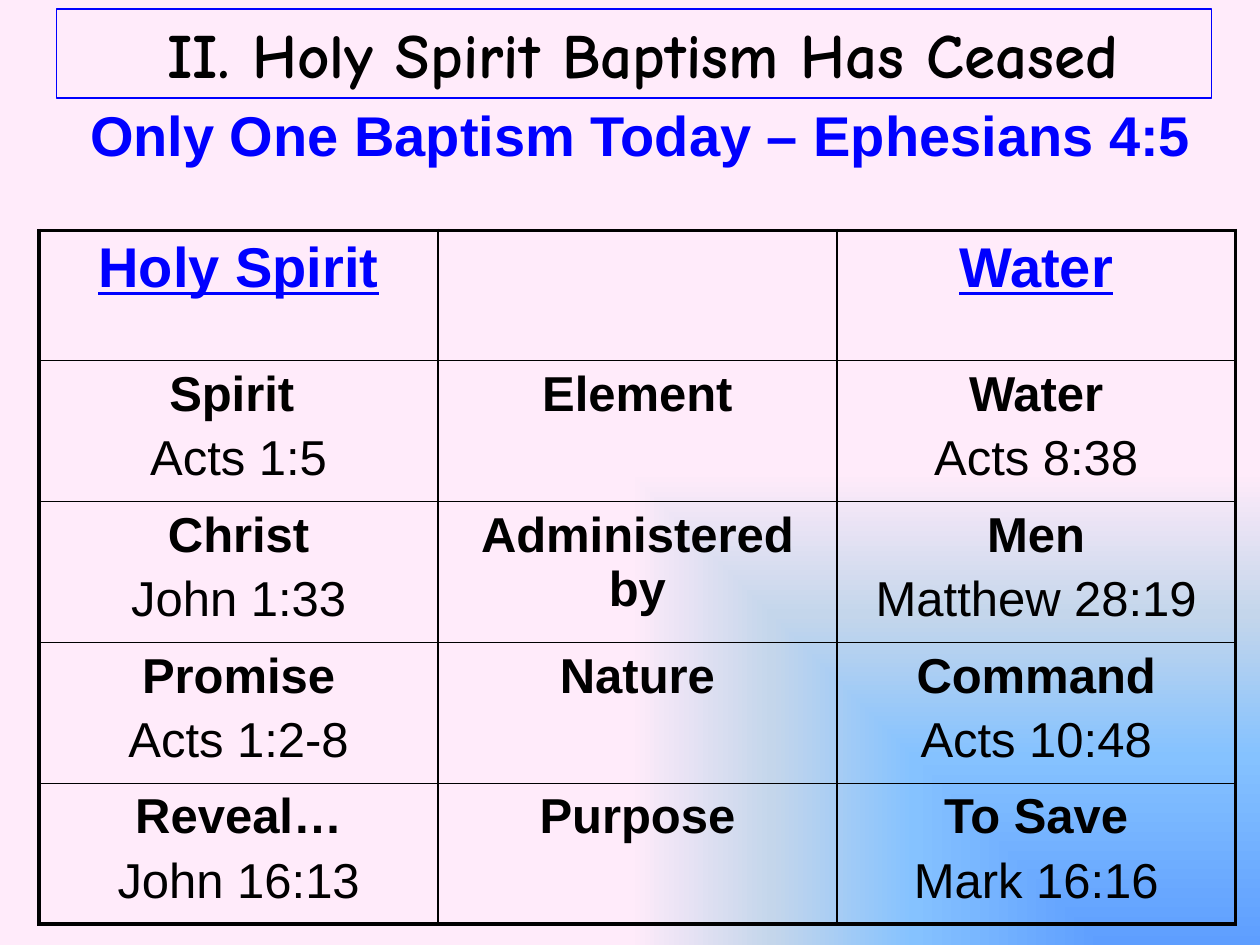
"""Build the slide comparing Holy Spirit baptism with water baptism."""
from typing import NamedTuple

from pptx import Presentation
from pptx.dml.color import RGBColor
from pptx.enum.shapes import MSO_SHAPE
from pptx.enum.text import MSO_ANCHOR, MSO_AUTO_SIZE, PP_ALIGN
from pptx.oxml import parse_xml
from pptx.oxml.ns import nsdecls
from pptx.util import Cm, Pt

RECTANGLE = MSO_SHAPE.RECTANGLE
TOP = MSO_ANCHOR.TOP
FIT_SHAPE = MSO_AUTO_SIZE.SHAPE_TO_FIT_TEXT
CENTER = PP_ALIGN.CENTER

BLACK = RGBColor(0x00, 0x00, 0x00)
BLUE = RGBColor(0x00, 0x00, 0xFF)
GRADIENT = {0: RGBColor(0x5E, 0x9E, 0xFF), 40: RGBColor(0x85, 0xC2, 0xFF),
            70: RGBColor(0xC4, 0xD6, 0xEB), 100: RGBColor(0xFF, 0xEB, 0xFA)}

SUBTITLE = {"size": Pt(32), "name": "Arial", "bold": True}
HEADING = SUBTITLE | {"underline": True}
TOPIC = SUBTITLE | {"size": Pt(28)}
VERSE = TOPIC | {"bold": False}
TITLE = {"size": Pt(36), "name": "Comic Neue", "bold": True}

COL_WIDTH, HEAD_HEIGHT, ROW_HEIGHT = Cm(8.04), Cm(2.62), Cm(2.84)
THIN, THICK = Pt(1), Pt(2.25)


class Line(NamedTuple):
    text: str
    style: dict
    color: RGBColor = BLACK


class Comparison(NamedTuple):
    spirit: tuple[str, str]
    aspect: str
    water: tuple[str, str]


COMPARISONS = [
    Comparison(("Spirit ", "Acts 1:5"), "Element", ("Water", "Acts 8:38")),
    Comparison(("Christ", "John 1:33"), "Administered by", ("Men", "Matthew 28:19")),
    Comparison(("Promise", "Acts 1:2-8"), "Nature", ("Command", "Acts 10:48")),
    Comparison(("Reveal…", "John 16:13"), "Purpose", ("To Save", "Mark 16:16")),
]


def set_background(s) -> None:
    stops = "".join(f'<a:gs pos="{pos * 1000}"><a:srgbClr val="{color}"/></a:gs>'
                    for pos, color in GRADIENT.items())
    s._element.cSld.insert(0, parse_xml(
        f'<p:bg {nsdecls("p", "a")}><p:bgPr><a:gradFill rotWithShape="0"><a:gsLst>{stops}</a:gsLst>'
        '<a:path path="rect"><a:fillToRect l="100000" t="100000"/></a:path>'
        '</a:gradFill><a:effectLst/></p:bgPr></p:bg>'))


def add_line(p, line: Line) -> None:
    p.alignment = CENTER
    r = p.add_run()
    r.text = line.text
    for name, value in line.style.items():
        setattr(r.font, name, value)
    r.font.color.rgb = line.color


def fill_cell(cell, lines: list[Line], borders: dict) -> None:
    tf = cell.text_frame
    for i, line in enumerate(lines):
        p = tf.add_paragraph() if i else tf.paragraphs[0]
        p.space_before = int(line.style["size"] * 0.2)
        add_line(p, line)
    tcPr = cell._tc.get_or_add_tcPr()
    for side, width in borders.items():
        tcPr.append(parse_xml(
            f'<a:ln{side} {nsdecls("a")} w="{width}"><a:solidFill>'
            f'<a:srgbClr val="{BLACK}"/></a:solidFill></a:ln{side}>'))
    cell.fill.background()


def add_comparison_table(s) -> None:
    rows = [[[Line("Holy Spirit", HEADING, BLUE)], [], [Line("Water", HEADING, BLUE)]]]
    for item in COMPARISONS:
        spirit, water = ([Line(topic, TOPIC), Line(verse, VERSE)]
                         for topic, verse in (item.spirit, item.water))
        rows.append([spirit, [Line(item.aspect, TOPIC)], water])
    last_row, last_col = len(rows) - 1, len(rows[0]) - 1
    table = s.shapes.add_table(len(rows), len(rows[0]), Cm(0.79), Cm(4.65),
                               COL_WIDTH * len(rows[0]),
                               HEAD_HEIGHT + ROW_HEIGHT * last_row).table
    table.first_row = table.horz_banding = False
    for col in table.columns:
        col.width = COL_WIDTH
    for i, row in enumerate(rows):
        table.rows[i].height = ROW_HEIGHT if i else HEAD_HEIGHT
        for j, lines in enumerate(row):
            outer = {"L": j == 0, "R": j == last_col, "T": i == 0, "B": i == last_row}
            fill_cell(table.cell(i, j), lines,
                      {side: THICK if edge else THIN for side, edge in outer.items()})


def add_subtitle(s) -> None:
    tf = s.shapes.add_textbox(Cm(1.17), Cm(1.9), Cm(23.39), Cm(1.63)).text_frame
    tf.word_wrap = False
    tf.auto_size = FIT_SHAPE
    p = tf.paragraphs[0]
    add_line(p, Line(" Only One Baptism Today – Ephesians 4:5", SUBTITLE, BLUE))
    add_line(p, Line(" ", VERSE | {"size": Pt(20)}))


def add_title(s) -> None:
    sp = s.shapes.add_shape(RECTANGLE, Cm(1.14), Cm(0.18), Cm(23.29), Cm(1.8))
    sp.shadow.inherit = False
    sp.fill.background()
    sp.line.color.rgb = BLUE
    sp.line.width = Pt(0.75)
    tf = sp.text_frame
    for name, value in {"word_wrap": True, "auto_size": FIT_SHAPE,
                        "vertical_anchor": TOP}.items():
        setattr(tf, name, value)
    p = tf.paragraphs[0]
    p.space_before = Pt(18)
    add_line(p, Line(" ", TITLE | {"size": Pt(28)}))
    add_line(p, Line("II. Holy Spirit Baptism Has Ceased", TITLE))


def main() -> None:
    prs = Presentation()
    prs.slide_width, prs.slide_height = Cm(25.4), Cm(19.05)
    s = prs.slides.add_slide(prs.slide_layouts[6])
    set_background(s)
    add_subtitle(s)
    add_comparison_table(s)
    add_title(s)
    prs.save("out.pptx")


if __name__ == "__main__":
    main()
